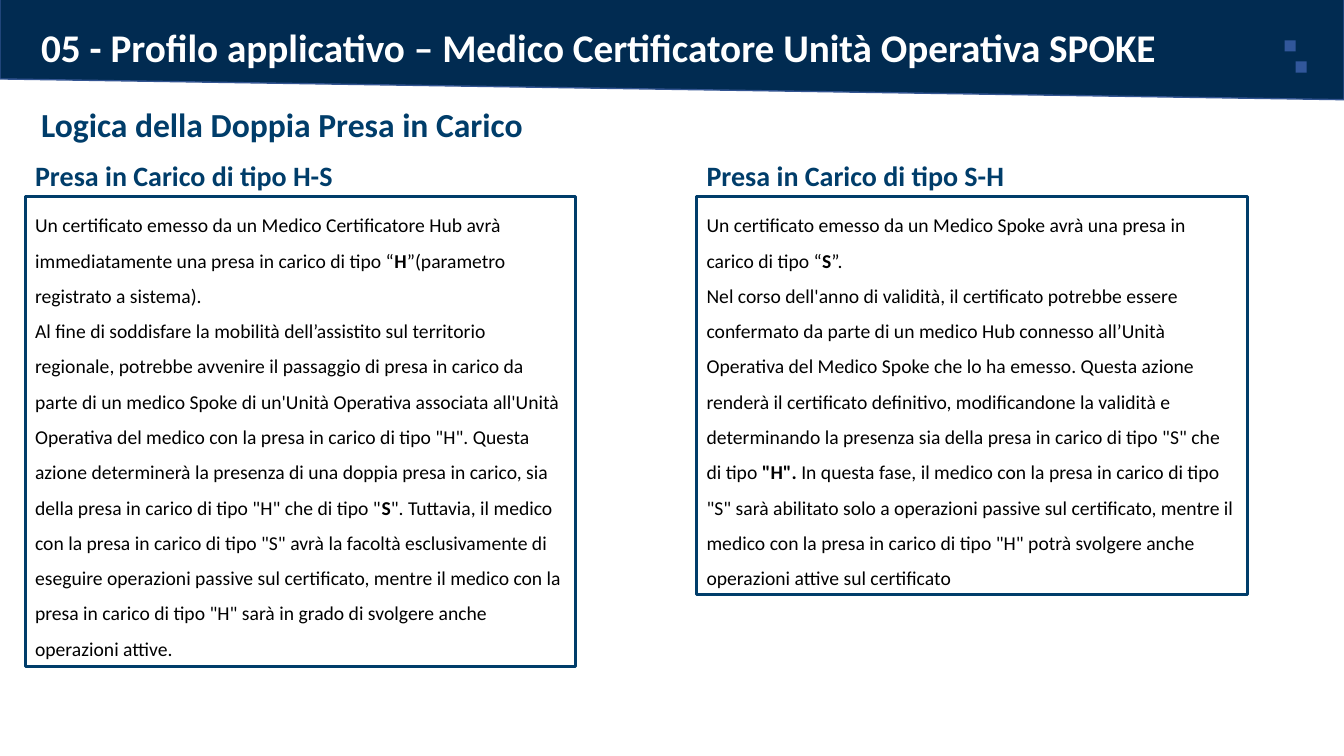
from pptx import Presentation
from pptx.dml.color import RGBColor
from pptx.enum.shapes import MSO_SHAPE as Shape
from pptx.enum.text import MSO_ANCHOR as Anchor, MSO_AUTO_SIZE as AutoSize, PP_ALIGN as Align
from pptx.util import Inches, Pt

COLORS = {"navy": "012B51", "edge": "325491", "square": "31579B",
          "blue": "003D6A", "black": "000000", "white": "FFFFFF"}
WIDTH, HEIGHT = 13.33, 7.5

deck = Presentation()
deck.slide_width, deck.slide_height = Inches(WIDTH), Inches(HEIGHT)
page = deck.slides.add_slide(deck.slide_layouts[6])


def add_box(kind, left, top, width, height, fill=None, line=None, line_width=1):
    box = page.shapes.add_shape(kind, *map(Inches, (left, top, width, height)))
    box.shadow.inherit = False
    if fill:
        box.fill.solid()
        box.fill.fore_color.rgb = RGBColor.from_string(COLORS[fill])
    else:
        box.fill.background()
    if line:
        box.line.color.rgb = RGBColor.from_string(COLORS[line])
        box.line.width = Pt(line_width)
    else:
        box.line.fill.background()
    return box


def write(box, paragraphs, size, color, bold=False, spacing=None):
    """Fill a box with paragraphs; text between ** marks is bold."""
    frame = box.text_frame
    frame.word_wrap = True
    frame.auto_size = AutoSize.SHAPE_TO_FIT_TEXT
    frame.vertical_anchor = Anchor.TOP
    for index, text in enumerate(paragraphs):
        para = frame.add_paragraph() if index else frame.paragraphs[0]
        para.alignment = Align.LEFT
        if spacing:
            para.line_spacing = spacing
        for part, words in enumerate(text.split("**")):
            span = para.add_run()
            span.text = words
            span.font.name = "Calibri"
            span.font.size = Pt(size)
            span.font.bold = bold or part % 2 == 1
            span.font.color.rgb = RGBColor.from_string(COLORS[color])


# Header band and its decoration
band = add_box(Shape.FLOWCHART_MANUAL_INPUT, 0, -0.04, WIDTH, 1.03, "navy", "edge")
band._element.spPr.get_or_add_xfrm().set("flipV", "1")
SQUARE = 0.11
for left, top in ((12.74, 0.4), (12.74 + SQUARE, 0.61)):
    add_box(Shape.RECTANGLE, left, top, SQUARE, SQUARE, "square")

# Title and subtitle
title = add_box(Shape.RECTANGLE, 0.31, 0.18, 11.56, 0.57, "navy")
write(title, ["05 - Profilo applicativo – Medico Certificatore Unità Operativa SPOKE"],
      28, "white", bold=True)
subtitle = page.shapes.add_textbox(*map(Inches, (0.31, 0.98, 12.88, 0.5)))
write(subtitle, ["Logica della Doppia Presa in Carico"], 24, "blue", bold=True)

# Two columns: heading, box height, paragraphs
columns = [
    ("Presa in Carico di tipo H-S", 4.66, [
        "Un certificato emesso da un Medico Certificatore Hub avrà immediatamente una "
        "presa in carico di tipo “**H**”(parametro registrato a sistema).",
        "Al fine di soddisfare la mobilità dell’assistito sul territorio regionale, "
        "potrebbe avvenire il passaggio di presa in carico da parte di un medico Spoke "
        "di un'Unità Operativa associata all'Unità Operativa del medico con la presa in "
        'carico di tipo "H". Questa azione determinerà la presenza di una doppia presa '
        'in carico, sia della presa in carico di tipo "H" che di tipo "**S**". Tuttavia, '
        'il medico con la presa in carico di tipo "S" avrà la facoltà esclusivamente di '
        "eseguire operazioni passive sul certificato, mentre il medico con la presa in "
        'carico di tipo "H" sarà in grado di svolgere anche operazioni attive.',
    ]),
    ("Presa in Carico di tipo S-H", 3.95, [
        "Un certificato emesso da un Medico Spoke avrà una presa in carico di tipo "
        "“**S**”.",
        "Nel corso dell'anno di validità, il certificato potrebbe essere confermato da "
        "parte di un medico Hub connesso all’Unità Operativa del Medico Spoke che lo ha "
        "emesso. Questa azione renderà il certificato definitivo, modificandone la "
        "validità e determinando la presenza sia della presa in carico di tipo "
        '"S" che di tipo** "H". **In questa fase, il medico con la presa in carico di '
        'tipo "S" sarà abilitato solo a operazioni passive sul certificato, mentre il '
        'medico con la presa in carico di tipo "H" potrà svolgere anche operazioni '
        "attive sul certificato",
    ]),
]
COLUMN_LEFT, COLUMN_STEP, COLUMN_WIDTH = 0.25, 6.66, 5.46
for number, (heading, height, paragraphs) in enumerate(columns):
    left = COLUMN_LEFT + number * COLUMN_STEP
    body = add_box(Shape.RECTANGLE, left, 1.95, COLUMN_WIDTH, height,
                   line="blue", line_width=2.25)
    write(body, paragraphs, 14, "black", spacing=1.5)
    label = page.shapes.add_textbox(*map(Inches, (left, 1.52, 3.86, 0.44)))
    write(label, [heading], 20, "blue", bold=True)

deck.save("out.pptx")
